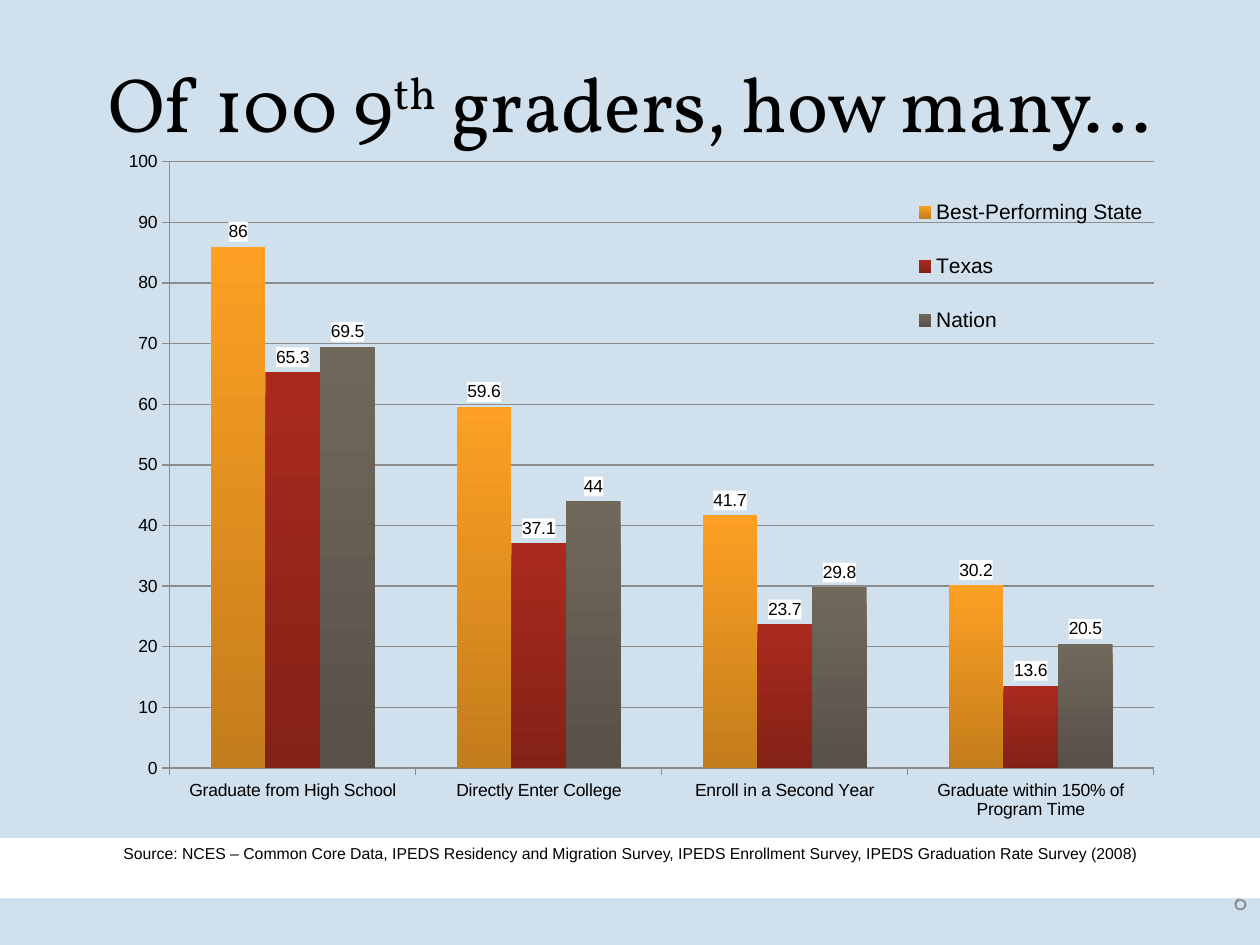
from lxml import etree
from pptx import Presentation
from pptx.chart.data import CategoryChartData
from pptx.dml.color import RGBColor
from pptx.enum.chart import XL_CHART_TYPE, XL_LABEL_POSITION, XL_LEGEND_POSITION, XL_TICK_MARK
from pptx.enum.shapes import MSO_SHAPE
from pptx.enum.text import MSO_ANCHOR, MSO_AUTO_SIZE, PP_ALIGN
from pptx.oxml import parse_xml
from pptx.oxml.ns import nsdecls, qn
from pptx.util import Cm, Pt

COLUMNS = XL_CHART_TYPE.COLUMN_CLUSTERED
OUTSIDE_END = XL_LABEL_POSITION.OUTSIDE_END
LEGEND_RIGHT = XL_LEGEND_POSITION.RIGHT
TICK_OUT, TICK_NONE = XL_TICK_MARK.OUTSIDE, XL_TICK_MARK.NONE
RECT = MSO_SHAPE.RECTANGLE
TOP, MIDDLE = MSO_ANCHOR.TOP, MSO_ANCHOR.MIDDLE
NO_FIT = MSO_AUTO_SIZE.NONE
CENTER, RIGHT = PP_ALIGN.CENTER, PP_ALIGN.RIGHT

STAGES = ["Graduate from High School", "Directly Enter College",
          "Enroll in a Second Year", "Graduate within 150% of Program Time"]
SERIES = [
    ("Best-Performing State", (86, 59.6, 41.7, 30.2), "FDA023", "C47D1C"),
    ("Texas", (65.3, 37.1, 23.7, 13.6), "AA2B1E", "842117"),
    ("Nation", (69.5, 44, 29.8, 20.5), "71685C", "585147"),
]
SOURCE = ("Source: NCES – Common Core Data, IPEDS Residency and Migration Survey, "
          "IPEDS Enrollment Survey, IPEDS Graduation Rate Survey (2008)")


def rgb(value):
    """Turn a hex string into a colour."""
    return RGBColor.from_string(value)


def set_font(font, color="000000", **values):
    """Set the colour and the given attributes of a font."""
    font.color.rgb = rgb(color)
    for name, value in values.items():
        setattr(font, name, value)


def set_frame(tf, **values):
    """Set wrapping and the given attributes of a text frame."""
    tf.word_wrap = True
    for name, value in values.items():
        setattr(tf, name, value)


def add_run(p, text, **values):
    """Add a formatted run to a paragraph."""
    r = p.add_run()
    r.text = text
    set_font(r.font, **values)
    return r


def set_layout(parent, before, target, **box):
    """Give a plot area or legend a fixed box in fractions of the chart."""
    for old in parent.findall(qn("c:layout")):
        parent.remove(old)
    layout = etree.Element(qn("c:layout"))
    manual = etree.SubElement(layout, qn("c:manualLayout"))
    values = {"xMode": "edge", "yMode": "edge", **box}
    if target:
        values = {"layoutTarget": target, **values}
    for name, value in values.items():
        etree.SubElement(manual, qn(f"c:{name}")).set("val", str(value))
    parent.find(qn(before)).addprevious(layout)


def fill_title(s, x, y, w, h):
    """Place and write the title with its raised ordinal."""
    sp = s.shapes.title
    sp.left, sp.top, sp.width, sp.height = x, y, w, h
    set_frame(sp.text_frame, auto_size=NO_FIT, vertical_anchor=MIDDLE,
              margin_top=0, margin_bottom=Cm(1.4))
    p = sp.text_frame.paragraphs[0]
    p.alignment = CENTER
    style = {"name": "Vollkorn", "size": Pt(44)}
    add_run(p, "Of 100 9", **style)
    ordinal = add_run(p, "th", **style)
    ordinal.font._element.set("baseline", "30000")
    add_run(p, " graders, how many…", **style)


def add_page_number(s, x, y, w, h):
    """Add the page number."""
    tf = s.shapes.add_textbox(x, y, w, h).text_frame
    set_frame(tf, vertical_anchor=MIDDLE)
    p = tf.paragraphs[0]
    p.alignment = RIGHT
    add_run(p, "6", name="Lato", size=Pt(14), color="8C8C8C")


def add_source_band(s, x, y, w, h):
    """Add the white band that names the sources."""
    sp = s.shapes.add_shape(RECT, x, y, w, h)
    sp.shadow.inherit = False
    sp.fill.solid()
    sp.fill.fore_color.rgb = rgb("FFFFFF")
    sp.line.fill.background()
    set_frame(sp.text_frame, vertical_anchor=TOP)
    p = sp.text_frame.paragraphs[0]
    p.alignment = CENTER
    add_run(p, SOURCE, name="Arial", size=Pt(9))


def format_axes(chart):
    """Format the axes and gridlines."""
    values = chart.value_axis
    values.minimum_scale, values.maximum_scale, values.major_unit = 0, 100, 10
    values.has_major_gridlines = True
    for axis in (values, chart.category_axis):
        axis.major_tick_mark, axis.minor_tick_mark = TICK_OUT, TICK_NONE
        set_font(axis.tick_labels.font, name="Arial", size=Pt(10))
    for line in (values.format.line, chart.category_axis.format.line,
                 values.major_gridlines.format.line):
        line.color.rgb = rgb("8C8C8C")
        line.width = Pt(0.75)


def format_series(series, top, bottom):
    """Shade the columns and label them on white."""
    fill = series.format.fill
    fill.gradient()
    fill.gradient_angle = 270
    for stop, color in zip(fill.gradient_stops, (top, bottom)):
        stop.color.rgb = rgb(color)
    labels = series.data_labels
    labels.show_value = True
    labels.position = OUTSIDE_END
    set_font(labels.font, name="Arial", size=Pt(10))
    white = parse_xml(f'<c:spPr {nsdecls("c", "a")}><a:solidFill>'
                      '<a:srgbClr val="FFFFFF"/></a:solidFill></c:spPr>')
    labels._element.find(qn("c:txPr")).addprevious(white)


def add_pipeline_chart(s, x, y, w, h):
    """Add the column chart of students at each stage."""
    data = CategoryChartData()
    data.categories = STAGES
    for name, values, *_ in SERIES:
        data.add_series(name, values)
    chart = s.shapes.add_chart(COLUMNS, x, y, w, h, data).chart
    chart.has_title = False
    set_font(chart.font, name="Karla", size=Pt(10))
    plot = chart.plots[0]
    plot.gap_width, plot.overlap, plot.vary_by_categories = 150, 0, False
    format_axes(chart)
    for series, (_, _, top, bottom) in zip(plot.series, SERIES):
        format_series(series, top, bottom)
    chart.has_legend = True
    legend = chart.legend
    legend.position = LEGEND_RIGHT
    legend.include_in_layout = False
    set_font(legend.font, name="Arial", size=Pt(12))
    set_layout(legend._element, "c:overlay", None, x=0.75, y=0.04, w=0.23, h=0.28)
    set_layout(plot._element.getparent(), "c:barChart", "inner",
               x=0.06, y=0.03, w=0.92, h=0.87)


def main():
    """Build and save the slide."""
    prs = Presentation()
    prs.slide_width, prs.slide_height = Cm(25.4), Cm(19.05)
    s = prs.slides.add_slide(prs.slide_layouts[5])
    s.background.fill.solid()
    s.background.fill.fore_color.rgb = rgb("D0E0EC")
    fill_title(s, Cm(1.27), Cm(1.55), Cm(22.86), Cm(2.39))
    add_page_number(s, Cm(19.48), Cm(17.65), Cm(5.92), Cm(1.02))
    add_source_band(s, 0, Cm(16.89), prs.slide_width, Cm(1.22))
    add_pipeline_chart(s, Cm(2.13), Cm(2.84), Cm(21.56), Cm(14.05))
    prs.save("out.pptx")


if __name__ == "__main__":
    main()
